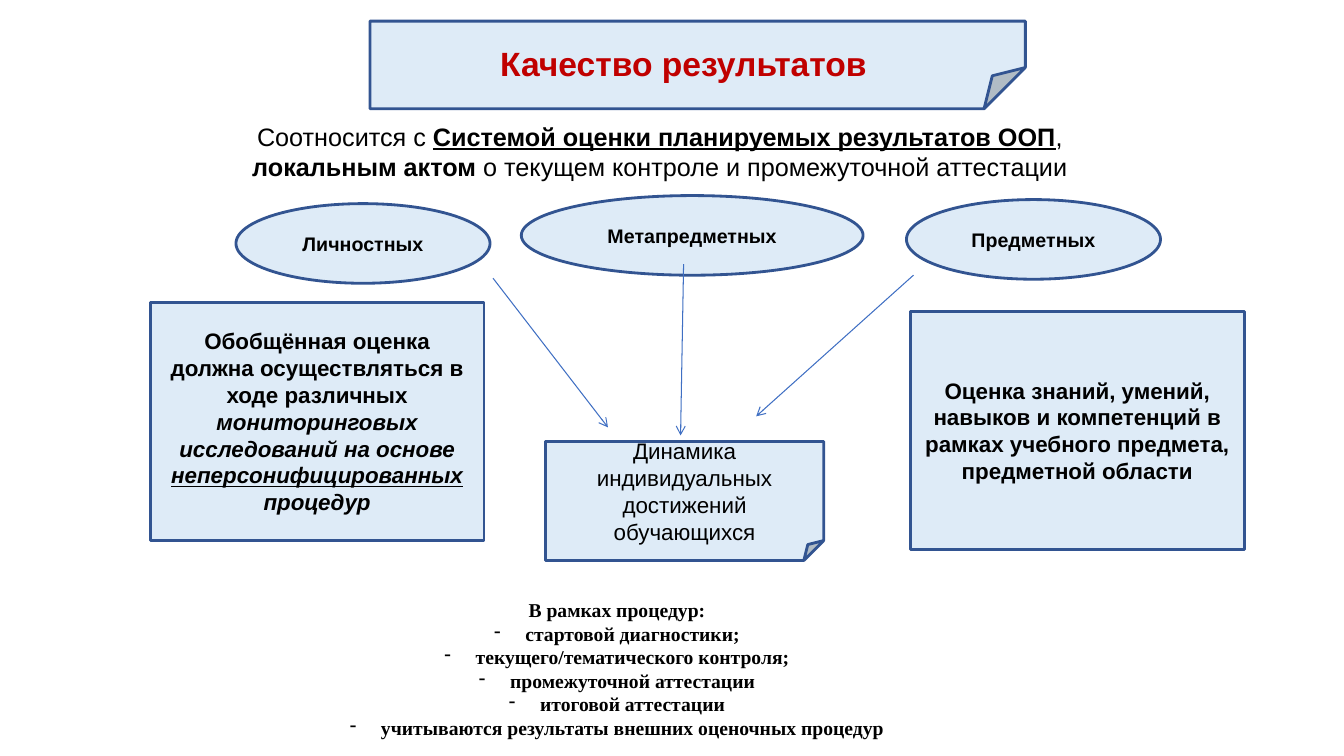
from typing import NamedTuple

from lxml.etree import SubElement
from pptx import Presentation
from pptx.dml.color import RGBColor
from pptx.enum.shapes import MSO_CONNECTOR as Link, MSO_SHAPE as Form
from pptx.enum.text import MSO_ANCHOR as Anchor, PP_ALIGN as Align
from pptx.oxml.ns import qn
from pptx.util import Inches, Pt

PALE = RGBColor(0xDE, 0xEB, 0xF7)
EDGE = RGBColor(0x32, 0x54, 0x91)
ARROW = RGBColor(0x3F, 0x6F, 0xC3)
BLACK = RGBColor(0, 0, 0)
RED = RGBColor(0xC0, 0, 0)


class Run(NamedTuple):
    text: str
    bold: bool = True
    italic: bool = False
    under: bool = False


class Style(NamedTuple):
    size: int
    color: RGBColor = BLACK
    face: str = "Arial"


class Box(NamedTuple):
    form: Form
    left: float
    top: float
    width: float
    height: float
    style: Style
    lines: list[list[Run]]


class Arrow(NamedTuple):
    x1: float
    y1: float
    x2: float
    y2: float


LABEL = Style(14)
BODY = Style(16)
LEAD = Style(18)
HEAD = Style(24, RED)
SERIF = Style(14, face="Times New Roman")

TITLE = Box(Form.FOLDED_CORNER, 3.67, 0.21, 6.5, 0.87, HEAD,
            [[Run("Качество результатов")]])

BOXES = [
    Box(Form.OVAL, 2.34, 2.02, 2.52, 0.79, LABEL, [[Run("Личностных")]]),
    Box(Form.OVAL, 5.17, 1.94, 3.39, 0.79, LABEL, [[Run("Метапредметных")]]),
    Box(Form.OVAL, 8.99, 1.98, 2.52, 0.79, LABEL, [[Run("Предметных")]]),
    Box(Form.RECTANGLE, 1.49, 3, 3.31, 2.36, BODY, [
        [Run("Обобщённая оценка")],
        [Run("должна осуществляться в ходе различных "),
         Run("мониторинговых исследований на основе ", italic=True),
         Run("неперсонифицированных ", italic=True, under=True),
         Run("процедур", italic=True)],
    ]),
    Box(Form.RECTANGLE, 9.03, 3.09, 3.31, 2.36, BODY, [
        [Run("Оценка знаний, умений, навыков и компетенций в рамках "
             "учебного предмета, предметной области")],
    ]),
    Box(Form.FOLDED_CORNER, 5.41, 4.38, 2.76, 1.18, BODY, [
        [Run("Динамика индивидуальных достижений", False)],
        [Run("обучающихся", False)],
    ]),
]

INTRO = [
    [Run("Соотносится с ", False),
     Run("Системой оценки планируемых результатов ООП", under=True),
     Run(",", False)],
    [Run("локальным актом "),
     Run("о текущем контроле и промежуточной аттестации", False)],
]

STEPS = [
    "стартовой диагностики;",
    "текущего/тематического контроля;",
    "промежуточной аттестации",
    "итоговой аттестации",
    "учитываются результаты внешних оценочных процедур",
]

ARROWS = [
    Arrow(4.89, 2.76, 6.03, 4.24),
    Arrow(6.78, 2.62, 6.75, 4.32),
    Arrow(9.06, 2.73, 7.5, 4.13),
]


def write(frame, lines: list[list[Run]], style: Style, anchor: Anchor) -> None:
    frame.word_wrap = True
    frame.vertical_anchor = anchor
    for i, line in enumerate(lines):
        para = frame.paragraphs[0] if i == 0 else frame.add_paragraph()
        para.alignment = Align.CENTER
        font = para.font
        font.name, font.size = style.face, Pt(style.size)
        font.color.rgb = style.color
        same = len({run.bold for run in line}) == 1
        if same:
            font.bold = line[0].bold
        for item in line:
            run = para.add_run()
            run.text = item.text
            if not same:
                run.font.bold = item.bold
            if item.italic:
                run.font.italic = True
            if item.under:
                run.font.underline = True


def draw_box(slide, box: Box):
    shape = slide.shapes.add_shape(box.form, Inches(box.left), Inches(box.top),
                                   Inches(box.width), Inches(box.height))
    shape.shadow.inherit = False
    shape.fill.solid()
    shape.fill.fore_color.rgb = PALE
    shape.line.color.rgb = EDGE
    shape.line.width = Pt(2)
    write(shape.text_frame, box.lines, box.style, Anchor.MIDDLE)
    return shape


def draw_title(slide) -> None:
    """Draw the title box, its text lowered towards the fold."""
    shape = draw_box(slide, TITLE)
    geom = shape._element.spPr.find(qn("a:prstGeom"))
    SubElement(geom.get_or_add_avLst(), qn("a:gd"), name="adj",
               fmla="val 47100")
    frame = shape.text_frame
    frame.margin_top, frame.margin_bottom = Inches(0.37), 0
    frame.margin_right = Inches(0.38)


def draw_text(slide, left: float, top: float, width: float, height: float,
              lines: list[list[Run]], style: Style, anchor: Anchor):
    box = slide.shapes.add_textbox(Inches(left), Inches(top),
                                   Inches(width), Inches(height))
    write(box.text_frame, lines, style, anchor)
    return box.text_frame


def add_dash(para) -> None:
    """Give a paragraph a hanging dash bullet."""
    props = para._p.get_or_add_pPr()
    props.set("marL", str(Inches(0.31)))
    props.set("indent", str(-Inches(0.31)))
    dash = props.makeelement(qn("a:buChar"), {"char": "-"})
    props.insert(0, dash)


def draw_arrow(slide, arrow: Arrow) -> None:
    ends = [Inches(value) for value in arrow]
    link = slide.shapes.add_connector(Link.STRAIGHT, *ends)
    link.line.color.rgb = ARROW
    link.line.width = Pt(0.75)
    SubElement(link.line._get_or_add_ln(), qn("a:tailEnd"), type="arrow")
    SubElement(link._element.spPr, qn("a:effectLst"))


def main() -> None:
    deck = Presentation()
    deck.slide_width, deck.slide_height = Inches(13.33), Inches(7.5)
    slide = deck.slides.add_slide(deck.slide_layouts[6])

    steps = [[Run("В рамках процедур:")]] + [[Run(step)] for step in STEPS]
    frame = draw_text(slide, 0.3, 5.88, 11.64, 1.51, steps, SERIF,
                      Anchor.MIDDLE)
    for para in frame.paragraphs[1:]:
        add_dash(para)

    draw_title(slide)
    for box in BOXES:
        draw_box(slide, box)
    draw_text(slide, 0.26, 1.15, 12.57, 0.71, INTRO, LEAD, Anchor.TOP)
    for arrow in ARROWS:
        draw_arrow(slide, arrow)

    deck.save("out.pptx")


if __name__ == "__main__":
    main()
